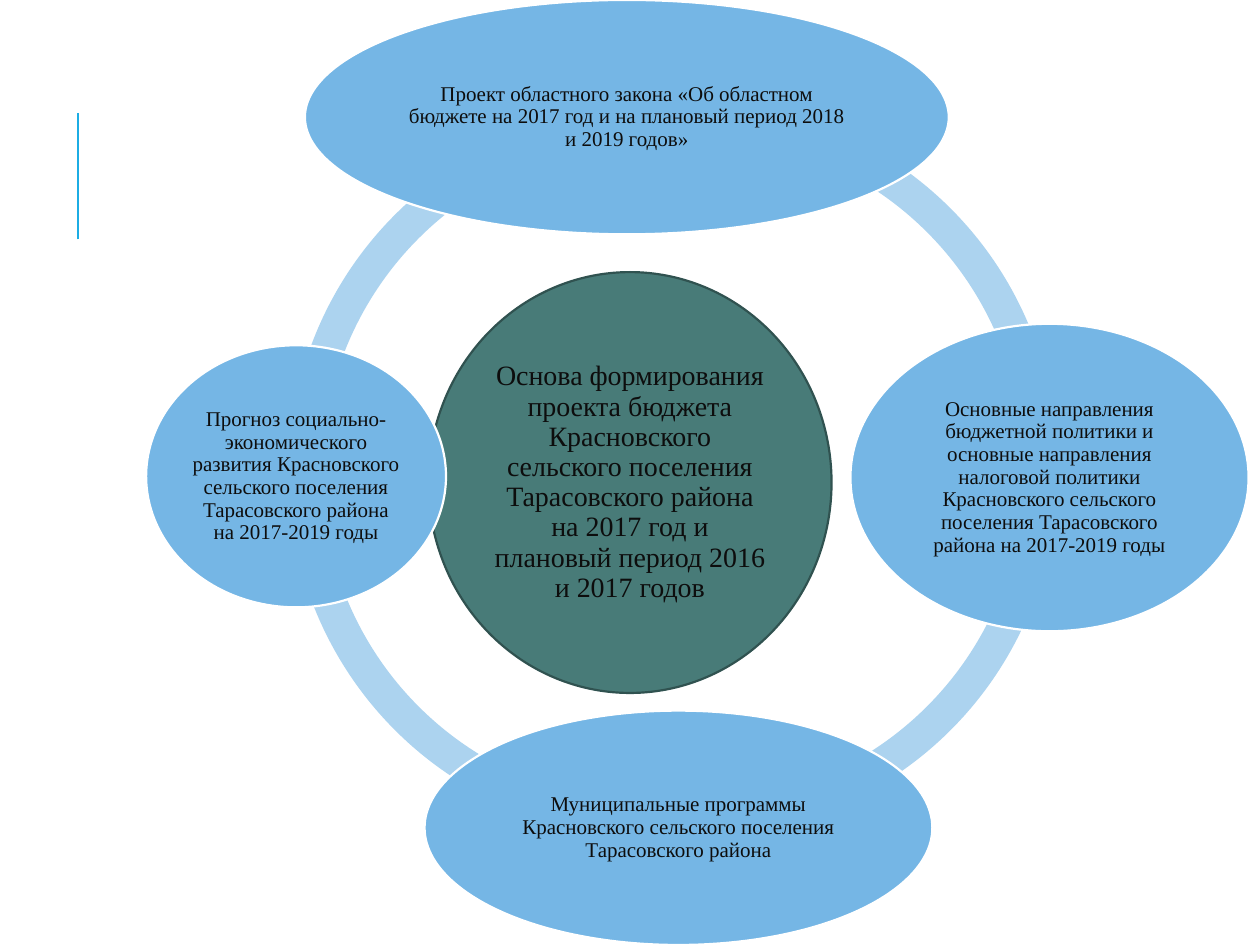
from lxml import etree
from pptx import Presentation
from pptx import util as u
from pptx.dml.color import RGBColor
from pptx.enum import shapes as shp, text as txt
from pptx.oxml.ns import qn

ACCENT, RING, SATELLITE, HUB = "1CADE4", "ACD3EF", "75B6E5", "487B78"
HUB_EDGE, WHITE, INK = "305250", "FFFFFF", "0D0D0D"
RING_SIZE, RING_WIDTH = 5.77, 0.046

# left, top, start and end angle in units of 100000/60000 degrees
ARCS = [
    (2.29, 0.86, 107.54, 159.59),
    (2.29, 0.87, 51.38, 107.73),
    (2.62, 0.87, 0.53, 55.49),
    (2.62, 0.81, 155.43, 1.19),
]

HUB_BOX = (3.4, 2.16, 3.2, 3.34)
HUB_TEXT = ("Основа формирования проекта бюджета Красновского сельского поселения "
            "Тарасовского района на 2017 год и плановый период 2016 и 2017 годов")

SOURCES = [
    ((2.42, 0, 5.11, 1.86),
     "Проект областного закона «Об областном бюджете на 2017 год "
     "и на плановый период 2018 и 2019 годов»"),
    ((6.75, 2.57, 3.16, 2.44),
     "Основные направления бюджетной политики и основные направления "
     "налоговой политики Красновского сельского поселения "
     "Тарасовского района на 2017-2019 годы"),
    ((3.37, 5.64, 4.03, 1.86),
     "Муниципальные программы Красновского сельского поселения Тарасовского района"),
    ((1.16, 2.74, 2.38, 2.08),
     "Прогноз социально-экономического развития Красновского сельского поселения "
     "Тарасовского района на 2017-2019 годы"),
]


def color(hex_value):
    return RGBColor.from_string(hex_value)


def set_format(target, values):
    for name, value in values.items():
        setattr(target, name, value)


def add_filled(slide, kind, box, fill, edge=None):
    figure = slide.shapes.add_shape(kind, *map(u.Inches, box))
    figure.shadow.inherit = False
    figure.fill.solid()
    figure.fill.fore_color.rgb = color(fill)
    if edge:
        figure.line.color.rgb = color(edge)
        figure.line.width = u.Pt(1.25)
    else:
        figure.line.fill.background()
    return figure


def add_accent(slide, x, top, bottom):
    accent = slide.shapes.add_connector(
        shp.MSO_CONNECTOR.STRAIGHT, *map(u.Inches, (x, bottom, x, top)))
    accent.line.color.rgb = color(ACCENT)
    accent.line.width = u.Pt(1.5)
    etree.SubElement(accent._element.spPr, qn("a:effectLst"))


def add_ring(slide, arcs):
    for left, top, start, end in arcs:
        arc = add_filled(slide, shp.MSO_SHAPE.BLOCK_ARC,
                         (left, top, RING_SIZE, RING_SIZE), RING)
        for index, value in enumerate((start, end, RING_WIDTH)):
            arc.adjustments[index] = value


def add_bubble(slide, box, wording, size, fill, edge):
    bubble = add_filled(slide, shp.MSO_SHAPE.OVAL, box, fill, edge)
    frame = bubble.text_frame
    inset = u.Inches(0.02)
    set_format(frame, {
        "word_wrap": True,
        "vertical_anchor": txt.MSO_ANCHOR.MIDDLE,
        "margin_left": inset, "margin_right": inset,
        "margin_top": inset, "margin_bottom": inset,
    })
    paragraph = frame.paragraphs[0]
    set_format(paragraph, {"alignment": txt.PP_ALIGN.CENTER, "line_spacing": 0.9})
    run = paragraph.add_run()
    run.text = wording
    set_format(run.font, {"name": "Times New Roman", "size": u.Pt(size)})
    run.font.color.rgb = color(INK)


def main():
    deck = Presentation()
    set_format(deck, {"slide_width": u.Inches(10), "slide_height": u.Inches(7.5)})
    slide = deck.slides.add_slide(deck.slide_layouts[6])

    # Side accent and ring behind the bubbles
    add_accent(slide, 0.62, 0.9, 1.9)
    add_ring(slide, ARCS)

    # Budget basis in the middle, its sources around it
    add_bubble(slide, HUB_BOX, HUB_TEXT, 16, HUB, HUB_EDGE)
    for box, wording in SOURCES:
        add_bubble(slide, box, wording, 12, SATELLITE, WHITE)

    deck.save("out.pptx")


if __name__ == "__main__":
    main()
